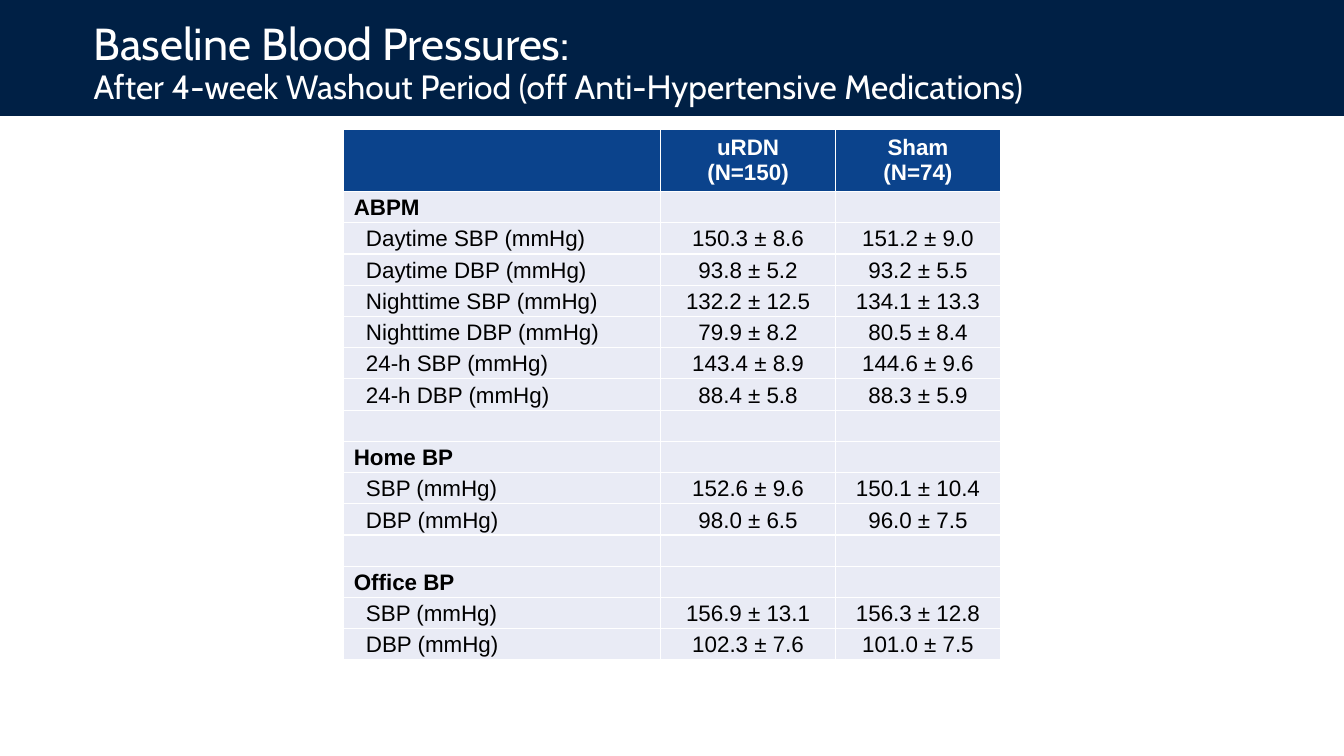
from dataclasses import dataclass
from lxml.etree import SubElement
from pptx import Presentation
from pptx.dml.color import RGBColor as Rgb
from pptx.enum.shapes import MSO_SHAPE as Shape
from pptx.enum.text import MSO_ANCHOR as Anchor, PP_ALIGN as Align
from pptx.oxml.ns import qn
from pptx.util import Inches, Pt


@dataclass
class Theme:
    navy: str = "002045"
    blue: str = "0B438C"
    pale: str = "E9EBF5"
    white: str = "FFFFFF"
    black: str = "000000"
    head: int = 32
    sub: int = 24
    body: int = 16


def style(run, name, size, color, bold=False):
    run.font.name = name
    run.font.size = Pt(size)
    run.font.bold = bold
    run.font.color.rgb = Rgb.from_string(color)


def edge(cell, color):
    props = cell._tc.get_or_add_tcPr()
    for i, side in enumerate(("lnL", "lnR", "lnT", "lnB")):
        line = props.makeelement(qn(f"a:{side}"), {"w": str(Pt(1))})
        fill = SubElement(line, qn("a:solidFill"))
        SubElement(fill, qn("a:srgbClr"), val=color)
        props.insert(i, line)


theme = Theme()
deck = Presentation()
deck.slide_width = Inches(13.33)
deck.slide_height = Inches(7.5)
slide = deck.slides.add_slide(deck.slide_layouts[6])

band = slide.shapes.add_shape(Shape.RECTANGLE, 0, 0, deck.slide_width, Inches(1.15))
band.shadow.inherit = False
band.fill.solid()
band.fill.fore_color.rgb = Rgb.from_string(theme.navy)
band.line.fill.background()

title = slide.shapes.add_textbox(Inches(0.83), Inches(0.12), Inches(11.5), Inches(1.03))
frame = title.text_frame
frame.word_wrap = True
frame.vertical_anchor = Anchor.MIDDLE
frame.text = (
    "Baseline Blood Pressures:\v"
    "After 4-week Washout Period (off Anti-Hypertensive Medications)"
)
para = frame.paragraphs[0]
para.line_spacing = 0.9
for run, size in zip(para.runs, (theme.head, theme.sub)):
    style(run, "Cabin", size, theme.white)

rows = [
    ("", "uRDN\v(N=150)", "Sham\v(N=74)"),
    ("ABPM", "", ""),
    ("Daytime SBP (mmHg)", "150.3 ± 8.6", "151.2 ± 9.0"),
    ("Daytime DBP (mmHg)", "93.8 ± 5.2", "93.2 ± 5.5"),
    ("Nighttime SBP (mmHg)", "132.2 ± 12.5", "134.1 ± 13.3"),
    ("Nighttime DBP (mmHg)", "79.9 ± 8.2", "80.5 ± 8.4"),
    ("24-h SBP (mmHg)", "143.4 ± 8.9", "144.6 ± 9.6"),
    ("24-h DBP (mmHg)", "88.4 ± 5.8", "88.3 ± 5.9"),
    ("", "", ""),
    ("Home BP", "", ""),
    ("SBP (mmHg)", "152.6 ± 9.6", "150.1 ± 10.4"),
    ("DBP (mmHg)", "98.0 ± 6.5", "96.0 ± 7.5"),
    ("", "", ""),
    ("Office BP", "", ""),
    ("SBP (mmHg)", "156.9 ± 13.1", "156.3 ± 12.8"),
    ("DBP (mmHg)", "102.3 ± 7.6", "101.0 ± 7.5"),
]
widths = (3.14, 1.74, 1.63)
table = slide.shapes.add_table(
    len(rows), len(widths), Inches(3.41), Inches(1.28), Inches(6.51), Inches(5.27)
).table
for col, width in zip(table.columns, widths):
    col.width = Inches(width)

for r, row in enumerate(rows):
    top = r == 0
    group = not any(row[1:])
    table.rows[r].height = Inches(0.62 if top else 0.31)
    for c, text in enumerate(row):
        cell = table.cell(r, c)
        cell.fill.solid()
        cell.fill.fore_color.rgb = Rgb.from_string(theme.blue if top else theme.pale)
        edge(cell, theme.white)
        cell.vertical_anchor = Anchor.MIDDLE
        cell.margin_left = cell.margin_right = Inches(0.1)
        cell.margin_top = cell.margin_bottom = 0
        if not text:
            continue
        cell.text_frame.text = text
        para = cell.text_frame.paragraphs[0]
        para.space_after = Pt(3)
        para.line_spacing = 1 if top else 1.07
        para.alignment = Align.CENTER if c else Align.LEFT
        if c == 0 and not group:
            para._p.get_or_add_pPr().set("marL", str(Inches(0.12)))
        color = theme.white if top else theme.black
        for run in para.runs:
            style(run, "Arial", theme.body, color, top or group)

deck.save("out.pptx")
